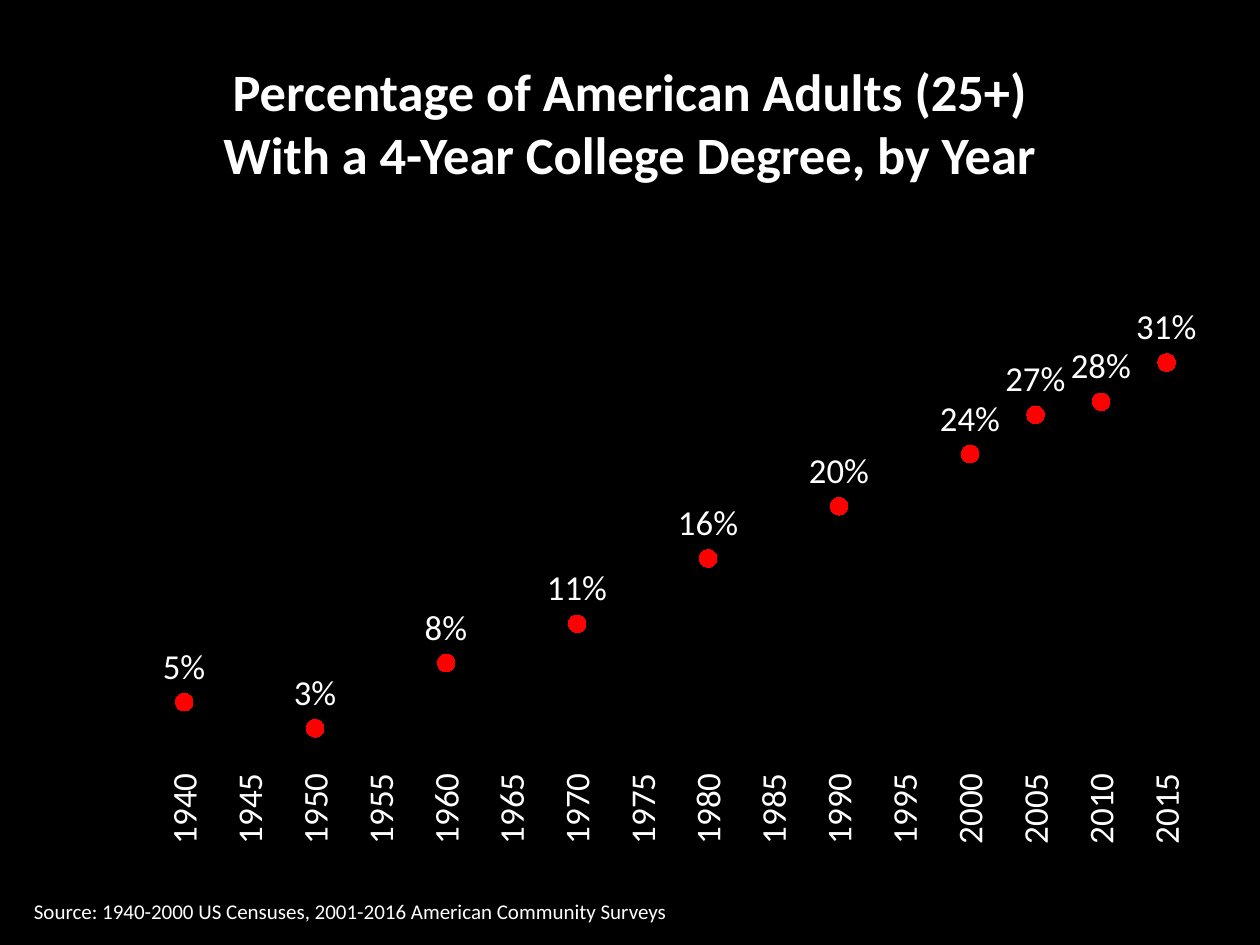
import pptx
import pptx.chart.data
import pptx.chart.datalabel
import pptx.dml.color
import pptx.enum.chart
import pptx.enum.text
import pptx.oxml
import pptx.util
from pptx.util import Inches

FONT = "Calibri"
WHITE = "FFFFFF"
RED = "FF0000"
FIRST_YEAR, LAST_YEAR, YEAR_STEP = 1940, 2015, 5
DEGREE_SHARES = {
    1940: 0.05, 1950: 0.03, 1960: 0.08, 1970: 0.11, 1980: 0.16,
    1990: 0.20, 2000: 0.24, 2005: 0.27, 2010: 0.28, 2015: 0.31,
}


def color(value):
    """Return the colour for a hex string."""
    return pptx.dml.color.RGBColor.from_string(value)


def set_font(font, size, value=WHITE, bold=False):
    """Format a font."""
    font.name = FONT
    font.size = pptx.util.Pt(size)
    font.bold = bold
    font.color.rgb = color(value)


def add_text(page, box, text, size=12, bold=False, align="LEFT"):
    """Add a text box with one paragraph for each line of text."""
    frame = page.shapes.add_textbox(*map(Inches, box)).text_frame
    frame.word_wrap = False
    frame.auto_size = pptx.enum.text.MSO_AUTO_SIZE.SHAPE_TO_FIT_TEXT
    for number, line in enumerate(text.split("\n")):
        para = frame.add_paragraph() if number else frame.paragraphs[0]
        para.alignment = pptx.enum.text.PP_ALIGN[align]
        span = para.add_run()
        span.text = line
        set_font(span.font, size, bold=bold)


def set_plot_layout(chart, **fractions):
    """Fix the inner plot area as fractions of the chart."""
    area = chart.plots[0]._element.getparent()
    for old in area.findall(pptx.oxml.ns.qn("c:layout")):
        area.remove(old)
    sizes = "".join(f'<c:{key} val="{part}"/>' for key, part in fractions.items())
    area.insert(0, pptx.oxml.parse_xml(
        f'<c:layout {pptx.oxml.ns.nsdecls("c")}><c:manualLayout>'
        '<c:layoutTarget val="inner"/><c:xMode val="edge"/><c:yMode val="edge"/>'
        f"{sizes}</c:manualLayout></c:layout>"))


def style_axes(chart):
    """Show upright years below the plot and hide the value axis."""
    none = pptx.enum.chart.XL_TICK_MARK.NONE
    years, shares = chart.category_axis, chart.value_axis
    for axis, low, high, step in ((years, FIRST_YEAR, LAST_YEAR, YEAR_STEP),
                                  (shares, 0, 0.35, 0.05)):
        axis.minimum_scale, axis.maximum_scale, axis.major_unit = low, high, step
        axis.has_major_gridlines = False
        axis.major_tick_mark = axis.minor_tick_mark = none
    shares.visible = False
    years.format.line.fill.background()
    years.tick_labels.number_format = "0"
    years.tick_labels.number_format_is_linked = False
    set_font(years.tick_labels.font, 20)
    body = years._element.find(".//" + pptx.oxml.ns.qn("a:bodyPr"))
    body.set("rot", "-5400000")
    body.set("vert", "horz")


def clear_missing_values(series):
    """Leave the years without a share empty in the series."""
    for value in list(series._element.iter(pptx.oxml.ns.qn("c:v"))):
        if value.text == "None":
            point = value.getparent()
            point.getparent().remove(point)


def style_series(series):
    """Draw the series as red dots with percentages above them."""
    series.format.line.fill.background()
    series.marker.style = pptx.enum.chart.XL_MARKER_STYLE.CIRCLE
    series.marker.size = 10
    for fill in (series.marker.format.fill, series.marker.format.line.fill):
        fill.solid()
        fill.fore_color.rgb = color(RED)
    labels = pptx.chart.datalabel.DataLabels(series._element.get_or_add_dLbls())
    labels.show_value = True
    labels.number_format = "0%"
    labels.number_format_is_linked = False
    labels.position = pptx.enum.chart.XL_LABEL_POSITION.ABOVE
    set_font(labels.font, 20)


def add_degree_chart(page, box):
    """Add the scatter chart of degree shares by year."""
    data = pptx.chart.data.XyChartData(number_format="0%")
    points = data.add_series("Series 1")
    for year in range(FIRST_YEAR, LAST_YEAR + 1, YEAR_STEP):
        points.add_data_point(year, DEGREE_SHARES.get(year))
    chart = page.shapes.add_chart(
        pptx.enum.chart.XL_CHART_TYPE.XY_SCATTER, *map(Inches, box), data).chart
    chart.has_legend = False
    chart.has_title = False
    set_font(chart.font, 10, "000000")
    chart.plots[0].vary_by_categories = False
    set_plot_layout(chart, x=0.108, y=0.138, w=0.875, h=0.702)
    style_axes(chart)
    series = chart.plots[0].series[0]
    clear_missing_values(series)
    style_series(series)


def main():
    """Build the slide and save it."""
    deck = pptx.Presentation()
    deck.slide_width, deck.slide_height = Inches(10), Inches(7.5)
    page = deck.slides.add_slide(deck.slide_layouts[6])
    page.background.fill.solid()
    page.background.fill.fore_color.rgb = color("000000")
    add_degree_chart(page, (0.5, 1.75, 9, 5.17))
    add_text(page, (1.63, 0.42, 6.74, 1.11),
             "Percentage of American Adults (25+)\nWith a 4-Year College Degree, by Year",
             size=30, bold=True, align="CENTER")
    add_text(page, (0.17, 7.08, 5.29, 0.3),
             "Source: 1940-2000 US Censuses, 2001-2016 American Community Surveys")
    deck.save("out.pptx")


if __name__ == "__main__":
    main()
